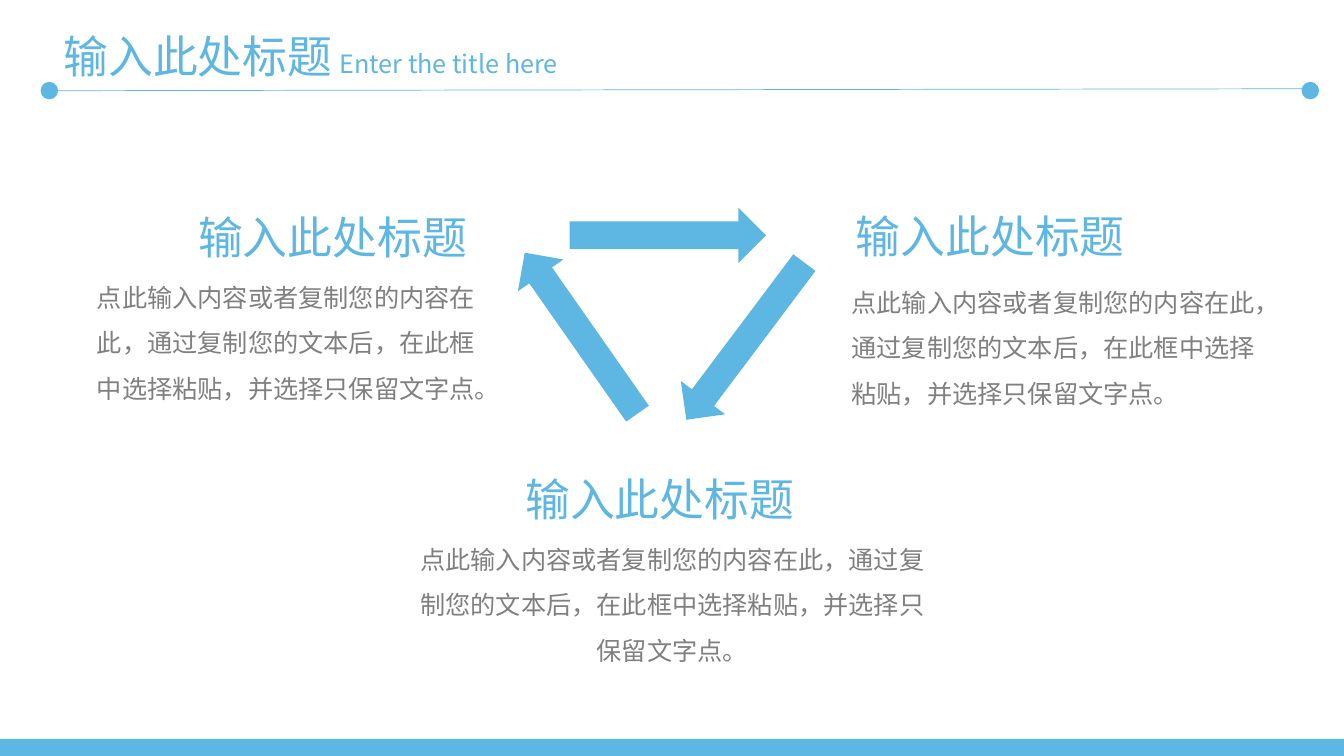
from lxml import etree
from pptx import Presentation
from pptx.dml.color import RGBColor
from pptx.enum import shapes as s, text as t
from pptx.oxml import ns
from pptx.util import Pt

BLUE = RGBColor(0x5E, 0xB6, 0xE3)
GRAY = RGBColor(0x80, 0x80, 0x80)
FONT = "Noto Sans CJK SC"
HEAD = "输入此处标题"
BODY = "点此输入内容或者复制您的内容在此，通过复制您的文本后，在此框中选择粘贴，并选择只保留文字点。"
LEFT, MID, RIGHT = t.PP_ALIGN.LEFT, t.PP_ALIGN.CENTER, t.PP_ALIGN.RIGHT
FRAME = {"word_wrap": True, "auto_size": t.MSO_AUTO_SIZE.NONE,
         "vertical_anchor": t.MSO_ANCHOR.TOP}
KINDS = {
    "head": {"size": Pt(32), "color": BLUE, "space": 1.0},
    "sub": {"size": Pt(18), "color": BLUE, "space": 1.0},
    "body": {"size": Pt(18), "color": GRAY, "space": 1.5},
}
BLOCKS = [
    ((128.9, 146.2, 217.4, 46), (54, 187.2, 292.3, 138.2), RIGHT),
    ((594, 145.4, 226.8, 46), (601.2, 190.8, 303.8, 105.1), LEFT),
    ((355, 333.4, 232.6, 46), (290.9, 374.4, 378.7, 105.1), MID),
]
ARROWS = [(457.2, 97.9, 90), (512.6, 173.5, 216.9), (395.3, 167.8, 325)]


def apply(item, form):
    for name, value in form.items():
        setattr(item, name, value)


def place(item, box):
    apply(item, dict(zip(("left", "top", "width", "height"), map(Pt, box))))


def write(item, words, kind, align=LEFT):
    form = KINDS[kind]
    frame = item.text_frame
    apply(frame, FRAME)
    para = frame.paragraphs[0]
    apply(para, {"alignment": align, "line_spacing": form["space"]})
    run = para.add_run()
    run.text = words
    apply(run.font, {"name": FONT, "size": form["size"]})
    run.font.color.rgb = form["color"]
    east = etree.SubElement(run.font._element, ns.qn("a:ea"))
    east.set("typeface", FONT)


def label(slide, box, words, kind, align=LEFT):
    write(slide.shapes.add_textbox(*map(Pt, box)), words, kind, align)


def solid(slide, kind, box, turn=0, edge=None):
    item = slide.shapes.add_shape(kind, *map(Pt, box))
    item.shadow.inherit = False
    item.rotation = turn
    item.fill.solid()
    item.fill.fore_color.rgb = BLUE
    if edge:
        item.line.color.rgb = BLUE
        item.line.width = Pt(edge)
    else:
        item.line.fill.background()


def rule(slide, ends):
    line = slide.shapes.add_connector(s.MSO_CONNECTOR.STRAIGHT, *map(Pt, ends))
    line.line.color.rgb = BLUE
    line.line.width = Pt(0.5)
    etree.SubElement(line._element.spPr, ns.qn("a:effectLst"))


def header(slide):
    title = slide.shapes.title
    place(title, (38.2, 16.6, 219.6, 46))
    write(title, HEAD, "head")
    label(slide, (235.4, 31, 185.8, 29), "Enter the title here", "sub")
    rule(slide, (941.8, 63.4, 38.2, 64.8))
    for left in (29.5, 930.2):
        solid(slide, s.MSO_SHAPE.OVAL, (left, 59, 11.5, 11.5), edge=1)


def main():
    deck = Presentation()
    apply(deck, {"slide_width": Pt(960), "slide_height": Pt(540)})
    slide = deck.slides.add_slide(deck.slide_layouts[5])
    solid(slide, s.MSO_SHAPE.RECTANGLE, (0, 527.8, 960, 12.2))
    header(slide)
    for head, body, align in BLOCKS:
        label(slide, body, BODY, "body", align)
        label(slide, head, HEAD, "head", MID)
    for left, top, turn in ARROWS:
        solid(slide, s.MSO_SHAPE.UP_ARROW, (left, top, 39.6, 140.4), turn)
    deck.save("out.pptx")


if __name__ == "__main__":
    main()
